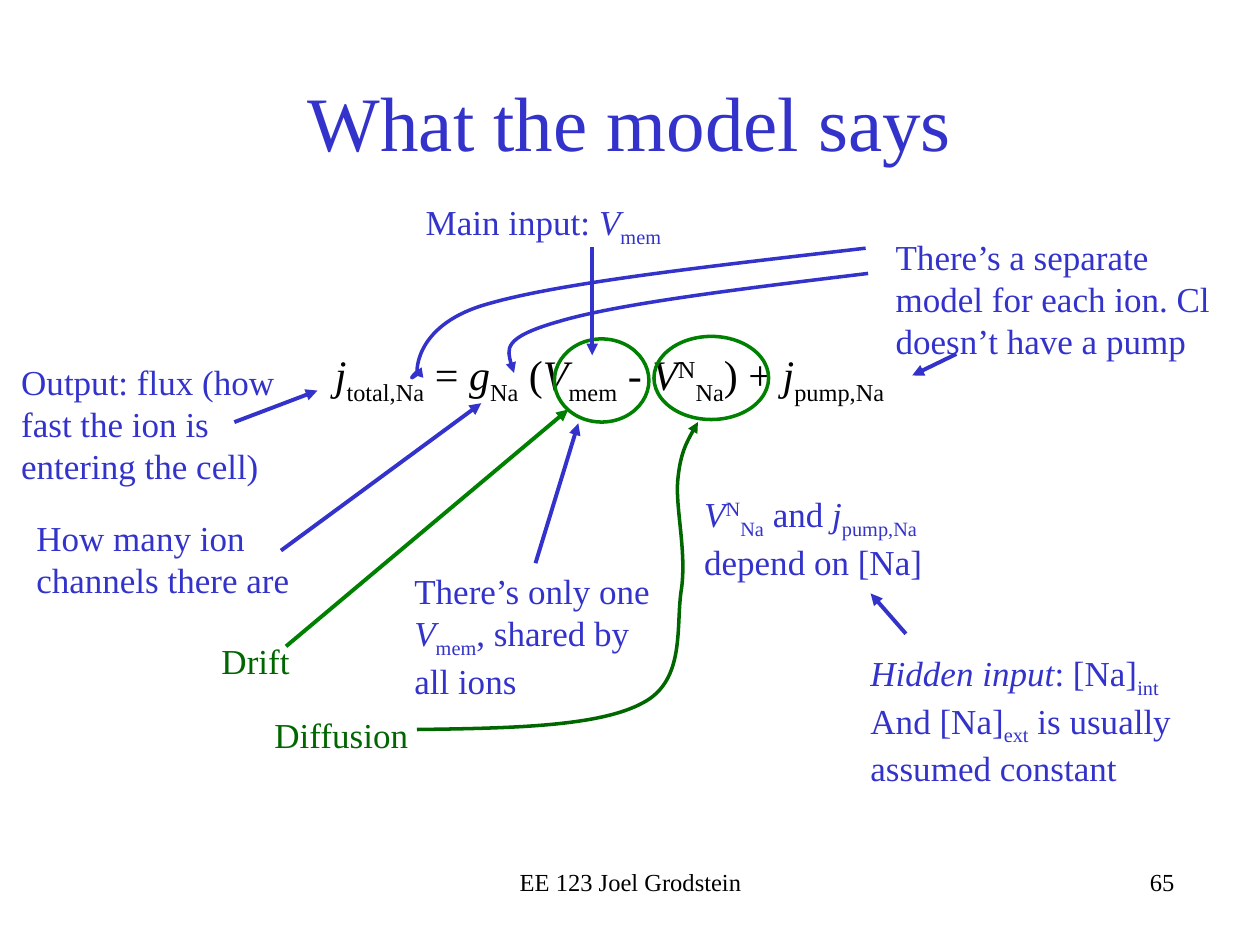
from pptx import Presentation
from pptx.dml.color import RGBColor
from pptx.enum.shapes import MSO_CONNECTOR, MSO_SHAPE
from pptx.enum.text import MSO_ANCHOR, PP_ALIGN
from pptx.oxml.ns import qn
from pptx.util import Inches, Pt
from lxml import etree

LEFT, MID, RIGHT = PP_ALIGN.LEFT, PP_ALIGN.CENTER, PP_ALIGN.RIGHT
LINE, OVAL = MSO_CONNECTOR.STRAIGHT, MSO_SHAPE.OVAL

THEME = dict(
    font="Times New Roman", black="000000", blue="3333CC",
    green="008000", dark="006600",
    title=44, model=24, note=20, foot=14, line=2.25, curve=2)

# Content: "|" parts runs; a run may open with / italic, _ sub or ^ super
TITLE = "What the model says", (0.75, 0.33, 8.5, 1.25)
MODEL = ("/j|_total,Na| = |/g|_Na| (|/V|_mem| - |/V|^N|_Na|) + |/j|_pump,Na",
         (2.56, 2.72, 5.04, 0.5))
FEET = [
    ("EE 123 Joel Grodstein", (3.42, 6.83, 3.17, 0.34), MID),
    ("65", (6.25, 6.83, 3.17, 0.5), RIGHT),
]
NOTES = [
    ("There’s a separate model for each ion. Cl doesn’t have a pump",
     (7.01, 1.82, 2.86, 1.11), "blue"),
    ("Main input: |/V|_mem", (3.28, 1.54, 2.31, 0.44), "blue"),
    ("Output: flux (how fast the ion is entering the cell)",
     (0.07, 2.81, 2.3, 1.11), "blue"),
    ("/V|^N|_Na| and |/j|_pump,Na| depend on [Na]",
     (5.49, 3.86, 2.66, 0.77), "blue"),
    ("/Hidden input|: [Na]|_int\nAnd [Na]|_ext| is usually assumed constant",
     (6.81, 5.12, 2.69, 1.11), "blue"),
    ("There’s only one |/V|_mem|, shared by all ions",
     (3.19, 4.47, 2.1, 1.11), "blue"),
    ("How many ion channels there are", (0.19, 4.05, 2.3, 0.77), "blue"),
    ("Drift", (1.66, 5.03, 0.86, 0.44), "dark"),
    ("Diffusion", (2.08, 5.61, 1.4, 0.44), "dark"),
]
ARROWS = [
    ((7.59, 2.81), (7.24, 2.98), "blue"),   # pump
    ((4.7, 1.96), (4.7, 2.82), "blue"),     # main input
    ((4.25, 4.47), (4.59, 3.36), "blue"),   # shared voltage
    ((1.86, 3.35), (2.52, 3.1), "blue"),    # output
    ((7.19, 5.03), (6.91, 4.71), "blue"),   # hidden input
    ((2.23, 4.37), (3.82, 3.2), "blue"),    # channels
    ((2.27, 5.13), (4.51, 3.25), "green"),  # drift
]
RINGS = [(4.4, 2.69, 0.75, 0.66), (5.19, 2.67, 0.91, 0.66)]
# Start point, then three points for each Bezier piece
CURVES = [
    ([(6.89, 2.17), (5.9, 2.29), (4.91, 2.41), (4.44, 2.55),
      (3.98, 2.68), (4.03, 2.82), (4.08, 2.96)], "blue"),
    ([(6.87, 1.97), (5.67, 2.11), (4.47, 2.24), (3.88, 2.41),
      (3.29, 2.57), (3.31, 2.95), (3.31, 2.95),
      (3.22, 3.04), (3.34, 2.95), (3.33, 2.95),
      (3.33, 2.96), (3.3, 2.96), (3.27, 2.97)], "blue"),
    ([(3.31, 5.79), (4.03, 5.78), (4.75, 5.77), (5.1, 5.58),
      (5.45, 5.4), (5.36, 4.96), (5.41, 4.67),
      (5.45, 4.37), (5.36, 4.03), (5.38, 3.81),
      (5.4, 3.6), (5.47, 3.47), (5.54, 3.35)], "dark"),
]


def inch(vals):
    return [Inches(v) for v in vals]


def tint(name):
    return RGBColor.from_string(THEME[name])


def write(frame, text, size, hue, align=LEFT):
    frame.word_wrap = True
    for n, row in enumerate(text.split("\n")):
        para = frame.add_paragraph() if n else frame.paragraphs[0]
        para.alignment = align
        font = para.font
        font.name, font.size = THEME["font"], Pt(THEME[size])
        font.color.rgb = tint(hue)
        for part in row.split("|"):
            mark = part[0] if part[0] in "/_^" else ""
            run = para.add_run()
            run.text = part[len(mark):]
            if mark == "/":
                run.font.italic = True
            elif mark:
                base = "-25000" if mark == "_" else "30000"
                run.font._element.set("baseline", base)


def add_text(slide, text, box, size, hue, align=LEFT):
    write(slide.shapes.add_textbox(*inch(box)).text_frame,
          text, size, hue, align)


def stroke(shape, hue, width, head=True):
    shape.line.color.rgb = tint(hue)
    shape.line.width = Pt(THEME[width])
    if head:
        etree.SubElement(shape.line._get_or_add_ln(), qn("a:tailEnd"),
                         type="triangle")


def add_arrow(slide, start, end, hue):
    arrow = slide.shapes.add_connector(LINE, *inch(start + end))
    stroke(arrow, hue, "line")
    etree.SubElement(arrow._element.spPr, qn("a:effectLst"))


def add_curve(slide, points, hue):
    first, *rest = [inch(p) for p in points]
    pen = slide.shapes.build_freeform(*first)
    pen.add_line_segments(rest, close=False)
    curve = pen.convert_to_shape()
    # Gather each three line points into one Bezier piece
    trace = next(curve._element.iter(qn("a:path")))
    steps = trace.findall(qn("a:lnTo"))
    for n in range(0, len(steps), 3):
        piece = etree.SubElement(trace, qn("a:cubicBezTo"))
        for step in steps[n:n + 3]:
            piece.append(step[0])
            trace.remove(step)
    curve.fill.background()
    curve.shadow.inherit = False
    stroke(curve, hue, "curve")


def main():
    deck = Presentation()
    deck.slide_width, deck.slide_height = inch((10, 7.5))
    slide = deck.slides.add_slide(deck.slide_layouts[5])

    # Title
    title = slide.shapes.title
    text, box = TITLE
    title.left, title.top, title.width, title.height = inch(box)
    title.text_frame.vertical_anchor = MSO_ANCHOR.MIDDLE
    write(title.text_frame, text, "title", "blue", MID)

    # Model, notes and footer
    add_text(slide, *MODEL, "model", "black")
    for text, box, hue in NOTES:
        add_text(slide, text, box, "note", hue)
    for text, box, align in FEET:
        add_text(slide, text, box, "foot", "black", align)

    # Rings and pointers
    for box in RINGS:
        ring = slide.shapes.add_shape(OVAL, *inch(box))
        ring.fill.background()
        ring.shadow.inherit = False
        stroke(ring, "green", "curve", head=False)
    for start, end, hue in ARROWS:
        add_arrow(slide, start, end, hue)
    for points, hue in CURVES:
        add_curve(slide, points, hue)

    deck.save("out.pptx")


if __name__ == "__main__":
    main()
